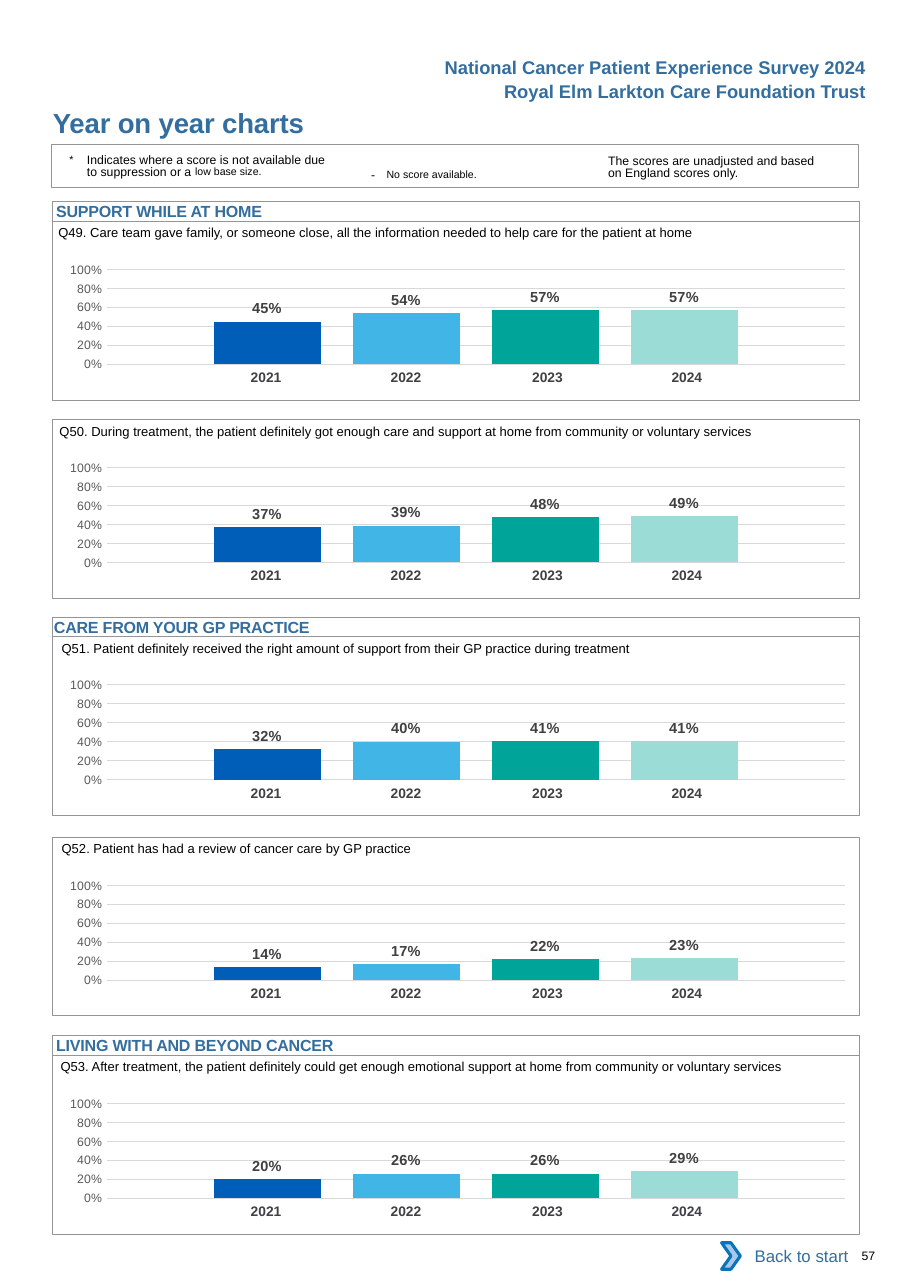
from lxml import etree
from pptx import Presentation
from pptx import util as u
from pptx.chart import data as chart_data
from pptx.dml.color import RGBColor
from pptx.enum import chart as chart_enum, shapes, text
from pptx.oxml import parse_xml

BLUE, BLACK, GREY = "336E9F", "000000", "939598"
YEAR_COLORS = {"2021": "005EB8", "2022": "41B6E6", "2023": "00A499", "2024": "9CDCD7"}
YEAR_WIDTHS = (1.27, 1.27, 1.34, 1.27)
YEAR_RIGHT_MARGINS = (0, 0, 0.04, 0.12)
PLOT_LAYOUT = {"x": 0.079, "y": 0.145, "w": 0.915, "h": 0.666}
CHART_NS = "http://schemas.openxmlformats.org/drawingml/2006/chart"
NO_TABLE_STYLE = "{2D5ABB26-0587-4C30-8999-92F81FD0307C}"
PANEL_LEFT, PANEL_WIDTH, PANEL_HEIGHT, HEADING_HEIGHT = 0.48, 7.32, 1.62, 0.18

# panel top, section heading, heading indent, question left, question, yearly scores
PANELS = [
    (2.01, "SUPPORT WHILE AT HOME", 0.03, 0.53,
     "Q49. Care team gave family, or someone close, all the information needed to help "
     "care for the patient at home", (0.45, 0.54, 0.57, 0.57)),
    (3.81, None, 0, 0.54,
     "Q50. During treatment, the patient definitely got enough care and support at home "
     "from community or voluntary services", (0.37, 0.39, 0.48, 0.49)),
    (5.78, "CARE FROM YOUR GP PRACTICE", 0.01, 0.56,
     "Q51. Patient definitely received the right amount of support from their GP practice "
     "during treatment", (0.32, 0.40, 0.41, 0.41)),
    (7.60, None, 0, 0.56,
     "Q52. Patient has had a review of cancer care by GP practice",
     (0.14, 0.17, 0.22, 0.23)),
    (9.58, "LIVING WITH AND BEYOND CANCER", 0.03, 0.55,
     "Q53. After treatment, the patient definitely could get enough emotional support at "
     "home from community or voluntary services", (0.20, 0.26, 0.26, 0.29)),
]


def color(value):
    return RGBColor.from_string(value)


def box(left, top, width, height):
    return [u.Inches(length) for length in (left, top, width, height)]


def style_font(font, size, value, bold=False):
    settings = {"name": "Arial", "size": u.Pt(size), "bold": bold}
    for name, setting in settings.items():
        setattr(font, name, setting)
    font.color.rgb = color(value)


def fill_text(shape, runs, size, value, bold=False, margins=(0, 0, 0, 0),
              align=text.PP_ALIGN.LEFT, anchor=text.MSO_ANCHOR.TOP):
    """Write runs given as (wording, format dict) into one paragraph."""
    frame = shape.text_frame
    sides = ("margin_left", "margin_top", "margin_right", "margin_bottom")
    settings = dict(zip(sides, map(u.Inches, margins)))
    settings.update(word_wrap=True, vertical_anchor=anchor)
    for name, setting in settings.items():
        setattr(frame, name, setting)
    paragraph = frame.paragraphs[0]
    paragraph.alignment = align
    for wording, options in runs:
        run = paragraph.add_run()
        run.text = wording
        style_font(run.font, options.get("size", size), value, bold)
        for name in ("baseline", "spc"):
            if name in options:
                run.font._element.set(name, str(options[name]))
    return paragraph


def add_text(slide, area, wording, size, value, **options):
    runs = [(wording, {})] if isinstance(wording, str) else wording
    return fill_text(slide.shapes.add_textbox(*box(*area)), runs, size, value, **options)


def add_outline(slide, area, line=GREY, width=0.5, fill=None, kind=shapes.MSO_SHAPE.RECTANGLE):
    shape = slide.shapes.add_shape(kind, *box(*area))
    shape.shadow.inherit = False
    if fill:
        shape.fill.solid()
        shape.fill.fore_color.rgb = color(fill)
    else:
        shape.fill.background()
    shape.line.color.rgb = color(line)
    shape.line.width = u.Pt(width)
    return shape


def add_years(slide, left, top):
    area = box(left, top, sum(YEAR_WIDTHS), 0.27)
    table = slide.shapes.add_table(1, len(YEAR_COLORS), *area).table
    table.first_row = table.horz_banding = False
    table._tbl.tblPr[0].text = NO_TABLE_STYLE
    for index, year in enumerate(YEAR_COLORS):
        table.columns[index].width = u.Inches(YEAR_WIDTHS[index])
        cell = table.cell(0, index)
        cell.fill.background()
        cell.margin_left = u.Inches(0.1)
        cell.margin_right = u.Inches(YEAR_RIGHT_MARGINS[index])
        paragraph = cell.text_frame.paragraphs[0]
        paragraph.alignment = text.PP_ALIGN.CENTER
        run = paragraph.add_run()
        run.text = year
        style_font(run.font, 9, "414042", True)


def place_plot(chart):
    """Fix the inner plot area inside the chart frame."""
    plot_area = chart.element.chart.plotArea
    for layout in plot_area.findall(f"{{{CHART_NS}}}layout"):
        plot_area.remove(layout)
    layout = parse_xml(f'<c:layout xmlns:c="{CHART_NS}"><c:manualLayout/></c:layout>')
    settings = {"layoutTarget": "inner", "xMode": "edge", "yMode": "edge", **PLOT_LAYOUT}
    for name, setting in settings.items():
        etree.SubElement(layout[0], f"{{{CHART_NS}}}{name}").set("val", str(setting))
    plot_area.insert(0, layout)


def add_scores(slide, area, scores):
    chart_values = chart_data.CategoryChartData(number_format="0%")
    chart_values.categories = ["1"]
    for number, score in enumerate(scores, 1):
        chart_values.add_series(f"Series {number}", [score])
    chart = slide.shapes.add_chart(
        chart_enum.XL_CHART_TYPE.COLUMN_CLUSTERED, *box(*area), chart_values).chart
    chart.has_title = chart.has_legend = False
    chart.font.name, chart.font.size = "Calibri", u.Pt(10)
    chart.category_axis.visible = False
    axis = chart.value_axis
    settings = {"minimum_scale": 0, "maximum_scale": 1, "major_unit": 0.2,
                "major_tick_mark": chart_enum.XL_TICK_MARK.NONE}
    for name, setting in settings.items():
        setattr(axis, name, setting)
    axis.format.line.fill.background()
    grid = axis.major_gridlines.format.line
    grid.color.rgb, grid.width = color("D9D9D9"), u.Pt(0.75)
    style_font(axis.tick_labels.font, 8, "595959")
    axis.tick_labels.number_format = "0%"
    axis.tick_labels.number_format_is_linked = False
    plot = chart.plots[0]
    plot.gap_width, plot.overlap, plot.vary_by_categories = 200, -30, False
    for series, fill in zip(plot.series, YEAR_COLORS.values()):
        series.format.fill.solid()
        series.format.fill.fore_color.rgb = color(fill)
        labels = series.data_labels
        labels.show_value = True
        labels.position = chart_enum.XL_LABEL_POSITION.OUTSIDE_END
        labels.number_format, labels.number_format_is_linked = "0%", False
        style_font(labels.font, 9.5, "404040", True)
    place_plot(chart)


def add_panel(slide, top, heading, indent, question_left, question, scores):
    left = PANEL_LEFT
    add_years(slide, left + 1.25, top + 1.3)
    add_scores(slide, (left - 0.09, top + 0.25, PANEL_WIDTH, 1.29), scores)
    add_outline(slide, (left, top, PANEL_WIDTH, PANEL_HEIGHT))
    if heading:
        shape = add_outline(slide, (left, top - HEADING_HEIGHT, PANEL_WIDTH, HEADING_HEIGHT))
        fill_text(shape, [(heading, {"spc": -10})], 10.5, BLUE, bold=True,
                  margins=(indent, 0, 0, 0))
    add_text(slide, (question_left, top - 0.06, 7.2, 0.24), question, 8.5, BLACK,
             margins=(0, 0.09, 0, 0))


def add_page_header(slide, left, top):
    lines = ("National Cancer Patient Experience Survey 2024",
             "Royal Elm Larkton Care Foundation Trust")
    for index, line in enumerate(lines):
        add_text(slide, (left + 3.4, top + 0.22 * index, 4.09, 0.3), line, 12, BLUE, bold=True,
                 margins=(0.1, 0.05, 0.1, 0.05), align=text.PP_ALIGN.RIGHT)
    add_text(slide, (left + 0.01, top + 0.5, 4.5, 0.3),
             [("Year on year charts", {"spc": -10})], 18, BLUE, bold=True)


def add_notes_box(slide, left, top):
    add_outline(slide, (left, top, PANEL_WIDTH, 0.39), width=0.75)
    missing = add_text(slide, (left + 0.16, top + 0.07, 2.4, 0.27), [
        ("*\t", {"size": 12, "baseline": 3000}),
        ("Indicates where a score is not available due to suppression or a ", {}),
        ("low base size.", {"size": 12, "baseline": 7000}),
    ], 8, BLACK, margins=(0, 0.03, 0, 0))
    for name, inches in {"marL": 0.16, "indent": -0.16}.items():
        missing._p.get_or_add_pPr().set(name, str(u.Inches(inches)))
    add_text(slide, (left + 2.8, top + 0.1, 1.83, 0.24), [
        ("- ", {"spc": 260}),
        ("No score available.", {"size": 12, "baseline": 3000}),
    ], 8, BLACK, margins=(0.1, 0.05, 0.1, 0.05))
    unadjusted = add_text(slide, (left + 5.05, top + 0.07, 1.98, 0.27),
                          "The scores are unadjusted and based on England scores only.",
                          8, BLACK, margins=(0, 0.03, 0, 0))
    for paragraph in (missing, unadjusted):
        paragraph.line_spacing = u.Pt(8.1)
        paragraph.space_before = u.Pt(2.5)


def add_page_footer(slide, left, top):
    add_text(slide, (left + 0.07, top, 1.18, 0.42), "Back to start", 11, BLUE,
             margins=(0.1, 0.05, 0.1, 0.05), align=text.PP_ALIGN.RIGHT,
             anchor=text.MSO_ANCHOR.MIDDLE)
    add_outline(slide, (left, top + 0.09, 0.17, 0.24), line="0A74BB", width=2, fill="A8C7E9",
                kind=shapes.MSO_SHAPE.CHEVRON)
    add_text(slide, (left + 1.27, top + 0.14, 0.41, 0.13), "57", 8, BLACK)


def main():
    presentation = Presentation()
    presentation.slide_width, presentation.slide_height = u.Inches(8.26), u.Inches(11.69)
    slide = presentation.slides.add_slide(presentation.slide_layouts[6])
    add_page_header(slide, 0.47, 0.46)
    add_notes_box(slide, 0.47, 1.31)
    for panel in PANELS:
        add_panel(slide, *panel)
    add_page_footer(slide, 6.55, 11.19)
    presentation.save("out.pptx")


if __name__ == "__main__":
    main()
